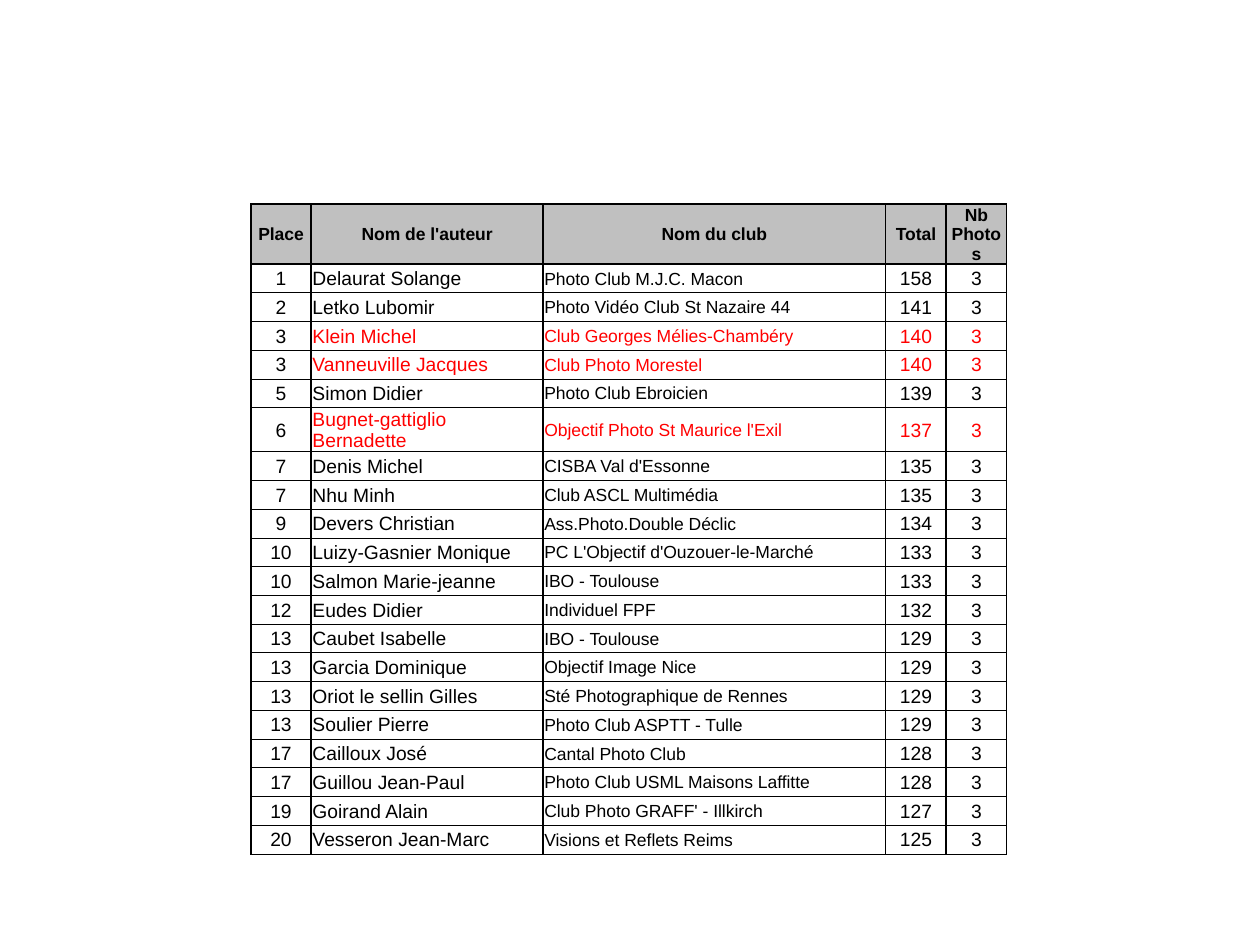
from copy import deepcopy
from dataclasses import dataclass
from typing import NamedTuple

from lxml.etree import SubElement
from pptx import Presentation
from pptx.dml.color import RGBColor
from pptx.enum.text import MSO_ANCHOR, PP_ALIGN
from pptx.oxml.ns import qn
from pptx.slide import Slide
from pptx.table import _Cell as Cell
from pptx.util import Inches, Pt


@dataclass(frozen=True)
class Theme:
    """Colours, font and sizes of the ranking."""
    font: str = "Arial"
    ink: str = "000000"
    mark: str = "FF0000"
    head: str = "C0C0C0"
    small: int = 10
    large: int = 11
    thick: float = 1
    thin: float = 0.5


class Entry(NamedTuple):
    """One ranked author."""
    place: int
    name: str
    club: str
    total: int
    marked: bool = False
    photos: int = 3


THEME = Theme()
LEFT, TOP = 1.99, 1.62
COLS = (0.48, 1.84, 2.72, 0.48, 0.48)
HEAD_H, BODY_H = 0.39, 4.56
HEADS = ("Place", "Nom de l'auteur", "Nom du club", "Total", "Nb\vPhotos")
ENTRIES = (
    Entry(1, "Delaurat Solange", "Photo Club M.J.C. Macon", 158),
    Entry(2, "Letko Lubomir", "Photo Vidéo Club St Nazaire 44", 141),
    Entry(3, "Klein Michel", "Club Georges Mélies-Chambéry", 140, True),
    Entry(3, "Vanneuville Jacques", "Club Photo Morestel", 140, True),
    Entry(5, "Simon Didier", "Photo Club Ebroicien", 139),
    Entry(6, "Bugnet-gattiglio Bernadette", "Objectif Photo St Maurice l'Exil", 137, True),
    Entry(7, "Denis Michel", "CISBA Val d'Essonne", 135),
    Entry(7, "Nhu Minh", "Club ASCL Multimédia", 135),
    Entry(9, "Devers Christian", "Ass.Photo.Double Déclic", 134),
    Entry(10, "Luizy-Gasnier Monique", "PC L'Objectif d'Ouzouer-le-Marché", 133),
    Entry(10, "Salmon Marie-jeanne", "IBO - Toulouse", 133),
    Entry(12, "Eudes Didier", "Individuel FPF", 132),
    Entry(13, "Caubet Isabelle", "IBO - Toulouse", 129),
    Entry(13, "Garcia Dominique", "Objectif Image Nice", 129),
    Entry(13, "Oriot le sellin Gilles", "Sté Photographique de Rennes", 129),
    Entry(13, "Soulier Pierre", "Photo Club ASPTT - Tulle", 129),
    Entry(17, "Cailloux José", "Cantal Photo Club", 128),
    Entry(17, "Guillou Jean-Paul", "Photo Club USML Maisons Laffitte", 128),
    Entry(19, "Goirand Alain", "Club Photo GRAFF' - Illkirch", 127),
    Entry(20, "Vesseron Jean-Marc", "Visions et Reflets Reims", 125),
)


def write(cell: Cell, text: str, *, size: int = THEME.large, color: str = THEME.ink,
          bold: bool = False, align: PP_ALIGN = PP_ALIGN.CENTER) -> None:
    """Put formatted text in a cell."""
    cell.vertical_anchor = MSO_ANCHOR.MIDDLE
    cell.margin_left = cell.margin_right = cell.margin_top = Inches(0.01)
    cell.margin_bottom = 0
    para = cell.text_frame.paragraphs[0]
    para.text = text
    para.alignment = align
    for run in para.runs:
        run.font.name = THEME.font
        run.font.size = Pt(size)
        run.font.bold = bold
        run.font.color.rgb = RGBColor.from_string(color)
    for gap in para._p.findall(qn("a:br")):
        gap.append(deepcopy(para.runs[0]._r.rPr))


def frame(cell: Cell, top: float, base: float) -> None:
    """Draw the four borders of a cell."""
    props = cell._tc.get_or_add_tcPr()
    sides = {"L": THEME.thick, "R": THEME.thick, "T": top, "B": base}
    for side, width in sides.items():
        line = SubElement(props, qn(f"a:ln{side}"), w=str(Pt(width)))
        fill = SubElement(line, qn("a:solidFill"))
        SubElement(fill, qn("a:srgbClr"), val=THEME.ink)


def draw_head(cell: Cell, text: str) -> None:
    """Draw a grey heading cell."""
    write(cell, text, size=THEME.small, bold=True)
    frame(cell, THEME.thick, THEME.thick)
    cell.fill.solid()
    cell.fill.fore_color.rgb = RGBColor.from_string(THEME.head)


def draw_row(cells: list[Cell], entry: Entry, first: bool) -> None:
    """Draw the cells of one ranked author."""
    color = THEME.mark if entry.marked else THEME.ink
    place, name, club, total, photos = cells
    write(place, str(entry.place))
    write(name, entry.name, color=color, align=PP_ALIGN.LEFT)
    write(club, entry.club, color=color, size=THEME.small, align=PP_ALIGN.LEFT)
    write(total, str(entry.total), color=color)
    write(photos, str(entry.photos), color=color)
    for cell in cells:
        frame(cell, THEME.thick if first else THEME.thin, THEME.thin)
        cell.fill.background()


def draw_table(slide: Slide) -> None:
    """Draw the whole ranking."""
    table = slide.shapes.add_table(
        len(ENTRIES) + 1, len(COLS), Inches(LEFT), Inches(TOP),
        Inches(sum(COLS)), Inches(HEAD_H + BODY_H)).table
    table.first_row = table.horz_banding = False
    for col, width in zip(table.columns, COLS):
        col.width = Inches(width)
    head, *body = table.rows
    head.height = Inches(HEAD_H)
    for cell, text in zip(head.cells, HEADS):
        draw_head(cell, text)
    for row, entry in zip(body, ENTRIES):
        row.height = Inches(BODY_H / len(ENTRIES))
        draw_row(list(row.cells), entry, entry is ENTRIES[0])


def main() -> None:
    """Build and save the slide."""
    deck = Presentation()
    deck.slide_width, deck.slide_height = Inches(10), Inches(7.5)
    draw_table(deck.slides.add_slide(deck.slide_layouts[6]))
    deck.save("out.pptx")


if __name__ == "__main__":
    main()
